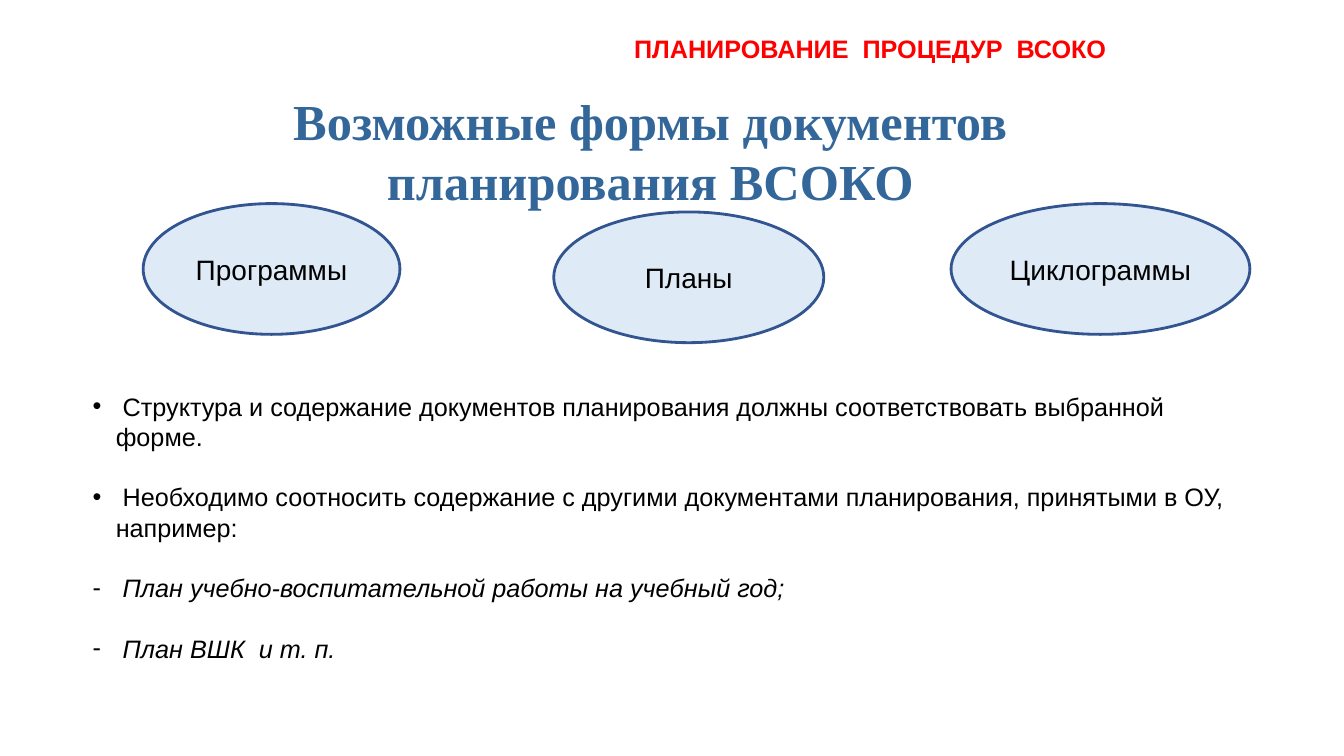
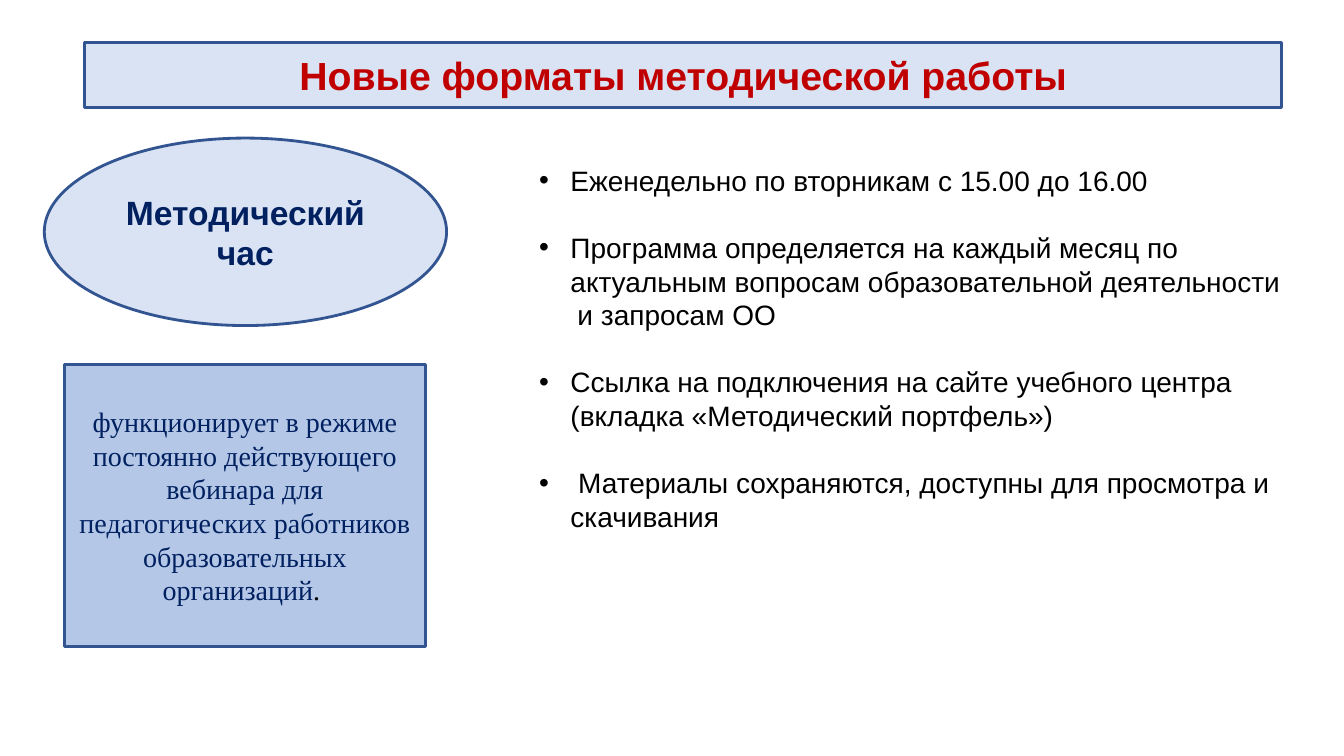
from dataclasses import dataclass

from lxml.etree import SubElement
from pptx import Presentation
from pptx.dml.color import RGBColor
from pptx.enum.shapes import MSO_SHAPE as Preset
from pptx.enum.text import MSO_ANCHOR as Anchor, PP_ALIGN as Align
from pptx.oxml.ns import qn
from pptx.util import Emu, Inches, Pt

WIDTH, HEIGHT = Inches(13.33), Inches(7.5)
SANS, SERIF = "Arial", "Times New Roman"
BLACK, RED, DARK_RED = "000000", "FF0000", "C00000"
NAVY, TITLE_BLUE, OUTLINE = "002060", "336699", "325491"
ICE, PALE_BLUE, MID_BLUE = "DEEBF7", "DAE3F3", "B4C7E7"


@dataclass
class Box:
    """A region measured in percent of the slide's width and height."""
    left: float
    top: float
    width: float
    height: float

    def inner(self, left, top, width, height):
        """Return a part of this region, given in percent of the region."""
        return Box(self.left + self.width * left / 100,
                   self.top + self.height * top / 100,
                   self.width * width / 100,
                   self.height * height / 100)

    def lengths(self):
        return (Emu(int(WIDTH * self.left / 100)), Emu(int(HEIGHT * self.top / 100)),
                Emu(int(WIDTH * self.width / 100)), Emu(int(HEIGHT * self.height / 100)))


@dataclass
class Style:
    size: int
    color: str = BLACK
    font: str = SANS
    bold: bool = False
    italic: bool = False


@dataclass
class Item:
    """A list paragraph: its bullet, its indent in inches, and whether a gap precedes it."""
    text: str
    bullet: str = "•"
    indent: float = 0.31
    gap: bool = True
    italic: bool = False


def color(hex_string):
    return RGBColor.from_string(hex_string)


def add_run(paragraph, text, style):
    run = paragraph.add_run()
    run.text = text
    font = run.font
    font.name, font.size = style.font, Pt(style.size)
    font.bold, font.italic = style.bold, style.italic
    font.color.rgb = color(style.color)


def add_panel(slide, box, preset, fill, runs):
    """Add an outlined shape with centred text; runs are (text, style) pairs."""
    shape = slide.shapes.add_shape(preset, *box.lengths())
    shape.shadow.inherit = False
    shape.fill.solid()
    shape.fill.fore_color.rgb = color(fill)
    shape.line.color.rgb = color(OUTLINE)
    shape.line.width = Pt(2)
    frame = shape.text_frame
    frame.word_wrap = True
    frame.vertical_anchor = Anchor.MIDDLE
    paragraph = frame.paragraphs[0]
    paragraph.alignment = Align.CENTER
    for text, style in runs:
        add_run(paragraph, text, style)


def add_caption(slide, box, text, style, alignment):
    frame = slide.shapes.add_textbox(*box.lengths()).text_frame
    frame.word_wrap = False
    paragraph = frame.paragraphs[0]
    paragraph.alignment = alignment
    add_run(paragraph, text, style)


def set_bullet(paragraph, item):
    properties = paragraph._p.get_or_add_pPr()
    properties.set("marL", str(Inches(item.indent)))
    if item.bullet:
        properties.set("indent", str(-Inches(item.indent)))
        bullet_font = SubElement(properties, qn("a:buFont"))
        bullet_font.set("typeface", SANS)
        SubElement(properties, qn("a:buChar")).set("char", item.bullet)


def add_list(slide, box, items, size):
    frame = slide.shapes.add_textbox(*box.lengths()).text_frame
    frame.word_wrap = True
    for number, item in enumerate(items):
        paragraph = frame.add_paragraph() if number else frame.paragraphs[0]
        if number and item.gap:
            paragraph.space_before = Pt(size * 1.2)
        set_bullet(paragraph, item)
        add_run(paragraph, item.text, Style(size, italic=item.italic))


def add_document_forms(slide, box):
    forms = [("Программы", 0, 0, 23.2),
             ("Планы", 37.1, 6, 24.4),
             ("Циклограммы", 73, 0, 27)]
    for name, left, top, width in forms:
        add_panel(slide, box.inner(left, top, width, 94), Preset.OVAL, ICE,
                  [(name, Style(20))])


def add_methodical_hour(slide, box):
    add_panel(slide, box.inner(0, 0, 100, 36.9), Preset.OVAL, PALE_BLUE,
              [("Методический час", Style(24, NAVY, bold=True))])
    add_panel(slide, box.inner(5, 44.64, 89.72, 55.36), Preset.RECTANGLE, MID_BLUE,
              [("функционирует в режиме постоянно действующего вебинара для "
                "педагогических работников образовательных организаций",
                Style(20, NAVY, SERIF)),
               (". ", Style(20, BLACK, SERIF))])


def build_planning_slide(slide):
    add_document_forms(slide, Box(10.65, 26.93, 82.35, 18.4))
    add_list(slide, Box(6.15, 51.07, 86.87, 37.73), [
        Item(" Структура и содержание документов планирования должны "
             "соответствовать выбранной форме.", indent=0.23),
        Item(" Необходимо соотносить содержание с другими документами "
             "планирования, принятыми в ОУ, например:", indent=0.23),
        Item(" План учебно-воспитательной работы на учебный год;", "-", 0.23, italic=True),
        Item(" План ВШК  и т. п.", "-", 0.23, italic=True),
    ], 18)
    add_caption(slide, Box(14.85, 11.2, 67.07, 10.53),
                "Возможные формы документов планирования ВСОКО",
                Style(36, TITLE_BLUE, SERIF, bold=True), Align.CENTER)
    add_caption(slide, Box(46.44, 3.73, 37.06, 5.33),
                "ПЛАНИРОВАНИЕ  ПРОЦЕДУР  ВСОКО",
                Style(18, RED, bold=True), Align.LEFT)


def build_formats_slide(slide):
    add_panel(slide, Box(6.3, 5.6, 89.05, 8.67), Preset.RECTANGLE, PALE_BLUE,
              [("Новые форматы методической работы", Style(28, DARK_RED, bold=True))])
    add_methodical_hour(slide, Box(3.3, 18.27, 29.93, 67.2))
    add_list(slide, Box(39.38, 20.93, 58.8, 64.13), [
        Item("Еженедельно по вторникам с 15.00 до 16.00"),
        Item("Программа определяется на каждый месяц по актуальным вопросам "
             "образовательной деятельности"),
        Item("и запросам ОО", bullet="", indent=0.38, gap=False),
        Item("Ссылка на подключения на сайте учебного центра "
             "(вкладка «Методический портфель»)"),
        Item(" Материалы сохраняются, доступны для просмотра и скачивания"),
    ], 20)


def main():
    presentation = Presentation()
    presentation.slide_width, presentation.slide_height = WIDTH, HEIGHT
    blank = presentation.slide_layouts[6]
    for build in (build_planning_slide, build_formats_slide):
        build(presentation.slides.add_slide(blank))
    presentation.save("out.pptx")


if __name__ == "__main__":
    main()
